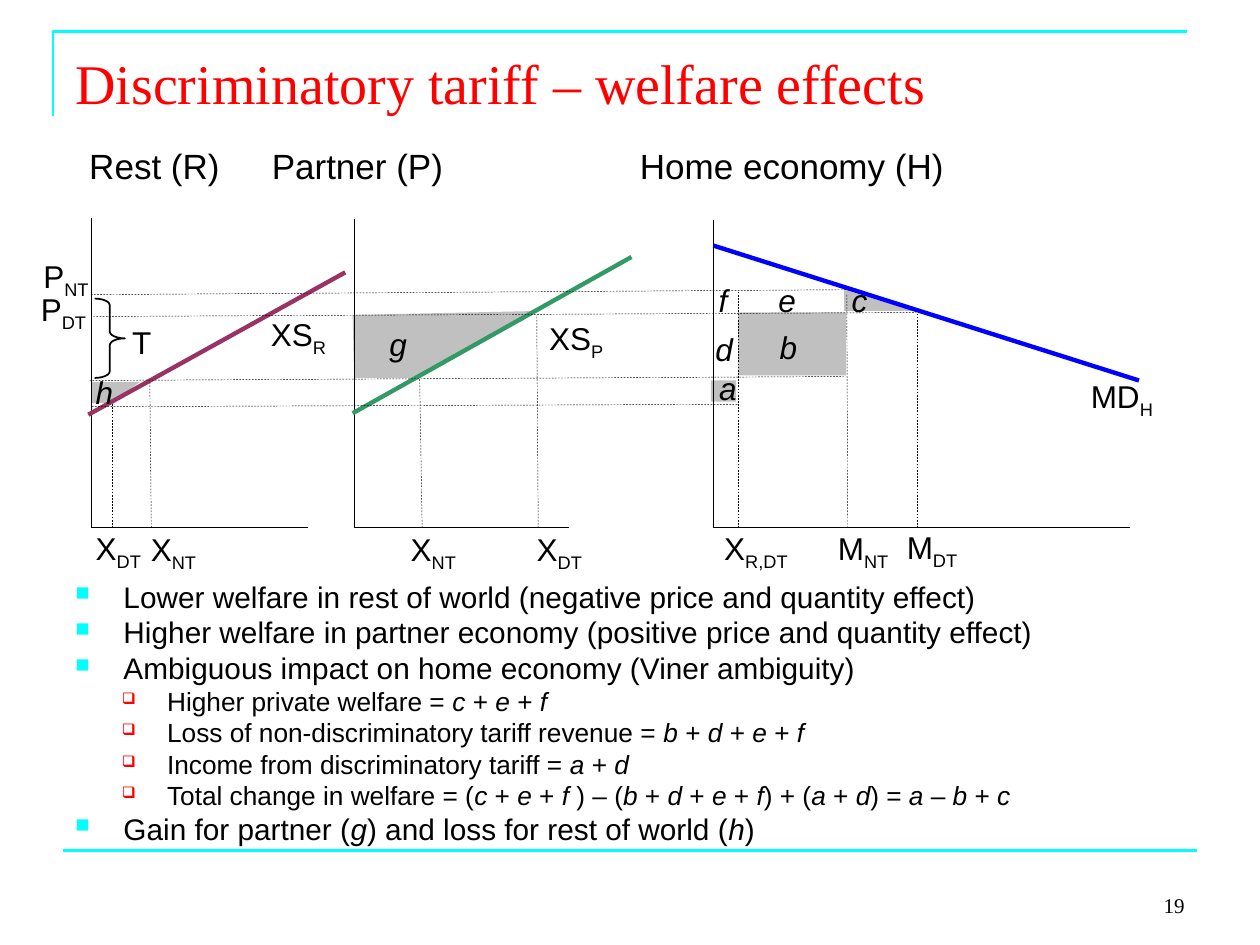
"""Build the slide on the welfare effects of a discriminatory tariff."""
from lxml.etree import SubElement
from pptx import Presentation
from pptx.dml.color import RGBColor
from pptx.enum.dml import MSO_LINE
from pptx.enum.shapes import MSO_CONNECTOR, MSO_SHAPE
from pptx.enum.text import MSO_ANCHOR, PP_ALIGN
from pptx.oxml.ns import qn
from pptx.util import Cm, Pt

BLACK, GREY, CYAN, RED = "000000", "C0C0C0", "00FFFF", "FF0000"
color = RGBColor.from_string


def write(paragraph, text, size, font="Arial", hue=BLACK):
    """Write text in which *...* is italic and _... is subscript."""
    for position, piece in enumerate(text.split("*")):
        for level, part in enumerate(piece.split("_")):
            if part:
                run = paragraph.add_run()
                run.text = part
                run.font.size = Pt(size)
                run.font.name = font
                run.font.color.rgb = color(hue)
                run.font.italic = position % 2 == 1
                if level:
                    run.font._element.set("baseline", "-25000")


def add_frame(left, top, width, height, anchor=MSO_ANCHOR.TOP, align=PP_ALIGN.LEFT):
    """Add a wrapping text box and return its text frame."""
    box = slide.shapes.add_textbox(Cm(left), Cm(top), Cm(width), Cm(height))
    box.text_frame.word_wrap = True
    box.text_frame.vertical_anchor = anchor
    box.text_frame.paragraphs[0].alignment = align
    return box.text_frame


presentation = Presentation()
presentation.slide_width, presentation.slide_height = Cm(25.4), Cm(19.05)
slide = presentation.slides.add_slide(presentation.slide_layouts[6])

outlines = [
    ([(1.07, 2.34), (1.07, 0.64), (23.93, 0.64)], None),
    ([(1.85, 7.7), (1.85, 8.13), (2.24, 8.13), (2.82, 7.7)], GREY),
    ([(7.14, 7.62), (8.46, 7.62), (10.85, 6.27), (7.11, 6.35)], GREY),
]
for points, fill in outlines:
    start, *rest = [(Cm(x), Cm(y)) for x, y in points]
    builder = slide.shapes.build_freeform(*start)
    builder.add_line_segments(rest, close=fill is not None)
    shape = builder.convert_to_shape()
    shape.shadow.inherit = False
    if fill:
        shape.fill.solid()
        shape.fill.fore_color.rgb = color(fill)
        shape.line.fill.background()
    else:
        shape.fill.background()
        shape.line.color.rgb = color(CYAN)
        shape.line.width = Pt(1.5)

areas = [
    (MSO_SHAPE.RIGHT_TRIANGLE, 17.02, 5.84, 1.4, 0.43),
    (MSO_SHAPE.RECTANGLE, 14.33, 7.67, 0.51, 0.43),
    (MSO_SHAPE.RECTANGLE, 14.88, 6.3, 2.18, 1.27),
]
for kind, *bounds in areas:
    shape = slide.shapes.add_shape(kind, *map(Cm, bounds))
    shape.shadow.inherit = False
    shape.fill.solid()
    shape.fill.fore_color.rgb = color(GREY)
    shape.line.fill.background()

FLOOR = 10.64
lines = [(1.27, 17.15, 24.13, 17.15, CYAN, 1.5)]
for left, top, right in [(1.85, 4.39, 6.2), (7.14, 4.42, 11.48), (14.38, 4.44, 22.78)]:
    lines.append((left, top, left, FLOOR, BLACK, 0.75))
    lines.append((left, FLOOR, right, FLOOR, BLACK, 0.75))
lines += [
    (14.38, 4.95, 22.96, 7.67, "0000FF", 2.5),
    (1.78, 8.36, 6.96, 5.49, "993366", 2.5),
    (7.11, 8.33, 12.73, 5.18, "339966", 2.5),
]
price_levels = [
    (1.83, 5.94, 17.09, 5.84), (1.88, 6.38, 18.47, 6.3),
    (1.8, 7.67, 17.02, 7.59), (1.85, 8.2, 14.88, 8.15),
]
quantity_drops = [
    (2.26, 2.26, 8.13), (3.05, 3.02, 7.7), (8.51, 8.46, 7.62), (10.85, 10.82, 6.35),
    (14.88, 14.88, 5.87), (17.09, 17.07, 5.92), (18.49, 18.49, 6.3),
]
lines += [(*level, BLACK, 0.25) for level in price_levels]
lines += [(foot, FLOOR, head, top, BLACK, 0.25) for foot, head, top in quantity_drops]
for *ends, hue, width in lines:
    connector = slide.shapes.add_connector(MSO_CONNECTOR.STRAIGHT, *map(Cm, ends))
    connector.line.color.rgb = color(hue)
    connector.line.width = Pt(width)
    if width == 0.25:
        connector.line.dash_style = MSO_LINE.DASH
    SubElement(connector._element.spPr, qn("a:effectLst"))

brace = slide.shapes.add_shape(MSO_SHAPE.LEFT_BRACE, Cm(1.91), Cm(6.02), Cm(0.61), Cm(1.6))
brace.shadow.inherit = False
brace.fill.background()
brace.line.color.rgb = color(BLACK)
brace.line.width = Pt(1)
brace.adjustments[0], brace.adjustments[1] = 0.222, 0.501
brace._element.spPr.find(qn("a:xfrm")).set("flipH", "1")

title = add_frame(1.27, 0.76, 22.86, 1.78, MSO_ANCHOR.MIDDLE)
write(title.paragraphs[0], "Discriminatory tariff – welfare effects", 32, "Times New Roman", RED)
number = add_frame(18.21, 17.35, 5.92, 1.27, MSO_ANCHOR.BOTTOM, PP_ALIGN.RIGHT)
write(number.paragraphs[0], "19", 12, "Times New Roman")

heading = add_frame(1.55, 2.79, 22.15, 1.09).paragraphs[0]
write(heading, "Rest (R)\tPartner (P)\tHome economy (H)", 20)
tab_list = SubElement(heading._p.get_or_add_pPr(), qn("a:tabLst"))
for stop in (3.68, 11.1):
    SubElement(tab_list, qn("a:tab"), pos=str(Cm(stop)), algn="l")

left_labels = [
    ("MD_H", 21.74, 7.47, 2.21), ("XS_R", 5.21, 6.22, 2.21), ("XS_P", 10.82, 6.3, 1.8),
    ("X_DT", 1.68, 10.54, 2.13), ("X_NT", 2.79, 10.57, 2.13), ("X_NT", 8.03, 10.57, 1.57),
    ("X_DT", 10.57, 10.57, 2.13), ("X_R,DT", 14.35, 10.54, 2.13),
    ("M_NT", 16.64, 10.54, 2.26), ("M_DT", 18.03, 10.52, 2.26),
]
centred_labels = [
    ("P_NT", 0.43, 5.05, 1.8), ("P_DT", 0.38, 5.72, 1.8), ("T", 2.16, 6.38, 1.4),
    ("*a*", 14.25, 7.32, 0.71), ("*b*", 15.44, 6.48, 0.91), ("*c*", 16.92, 5.54, 0.71),
    ("*d*", 14.17, 6.53, 0.71), ("*e*", 15.44, 5.54, 0.71), ("*f*", 14.22, 5.54, 0.71),
    ("*g*", 7.57, 6.43, 0.91), ("*h*", 1.65, 7.39, 0.91),
]
for labels, align in [(left_labels, PP_ALIGN.LEFT), (centred_labels, PP_ALIGN.CENTER)]:
    for text, left, top, width in labels:
        frame = add_frame(left, top, width, 1.02, align=align)
        write(frame.paragraphs[0], text, 18)

points = [
    (0, "Lower welfare in rest of world (negative price and quantity effect)"),
    (0, "Higher welfare in partner economy (positive price and quantity effect)"),
    (0, "Ambiguous impact on home economy (Viner ambiguity)"),
    (1, "Higher private welfare = *c* + *e* + *f*"),
    (1, "Loss of non-discriminatory tariff revenue = *b* + *d* + *e* + *f*"),
    (1, "Income from discriminatory tariff = *a* + *d*"),
    (1, "Total change in welfare = (*c* + *e* + *f *) – (*b* + *d* + *e* + *f*)"
        " + (*a* + *d*) = *a* – *b* + *c*"),
    (0, "Gain for partner (*g*) and loss for rest of world (*h*)"),
]
styles = [(17, 4, 0.97, -0.97, "■", CYAN, 65), (15, 3.5, 1.85, -0.91, "❑", RED, 60)]
body = add_frame(1.27, 11.68, 22.86, 5.56)
for index, (level, text) in enumerate(points):
    size, space, margin, indent, bullet, hue, percent = styles[level]
    paragraph = body.add_paragraph() if index else body.paragraphs[0]
    paragraph.level = level
    paragraph.line_spacing = 0.8
    paragraph.space_before = Pt(space)
    write(paragraph, text, size)
    properties = paragraph._p.get_or_add_pPr()
    properties.set("marL", str(Cm(margin)))
    properties.set("indent", str(Cm(indent)))
    SubElement(SubElement(properties, qn("a:buClr")), qn("a:srgbClr"), val=hue)
    SubElement(properties, qn("a:buSzPct"), val=str(percent * 1000))
    SubElement(properties, qn("a:buChar"), char=bullet)

presentation.save("out.pptx")
